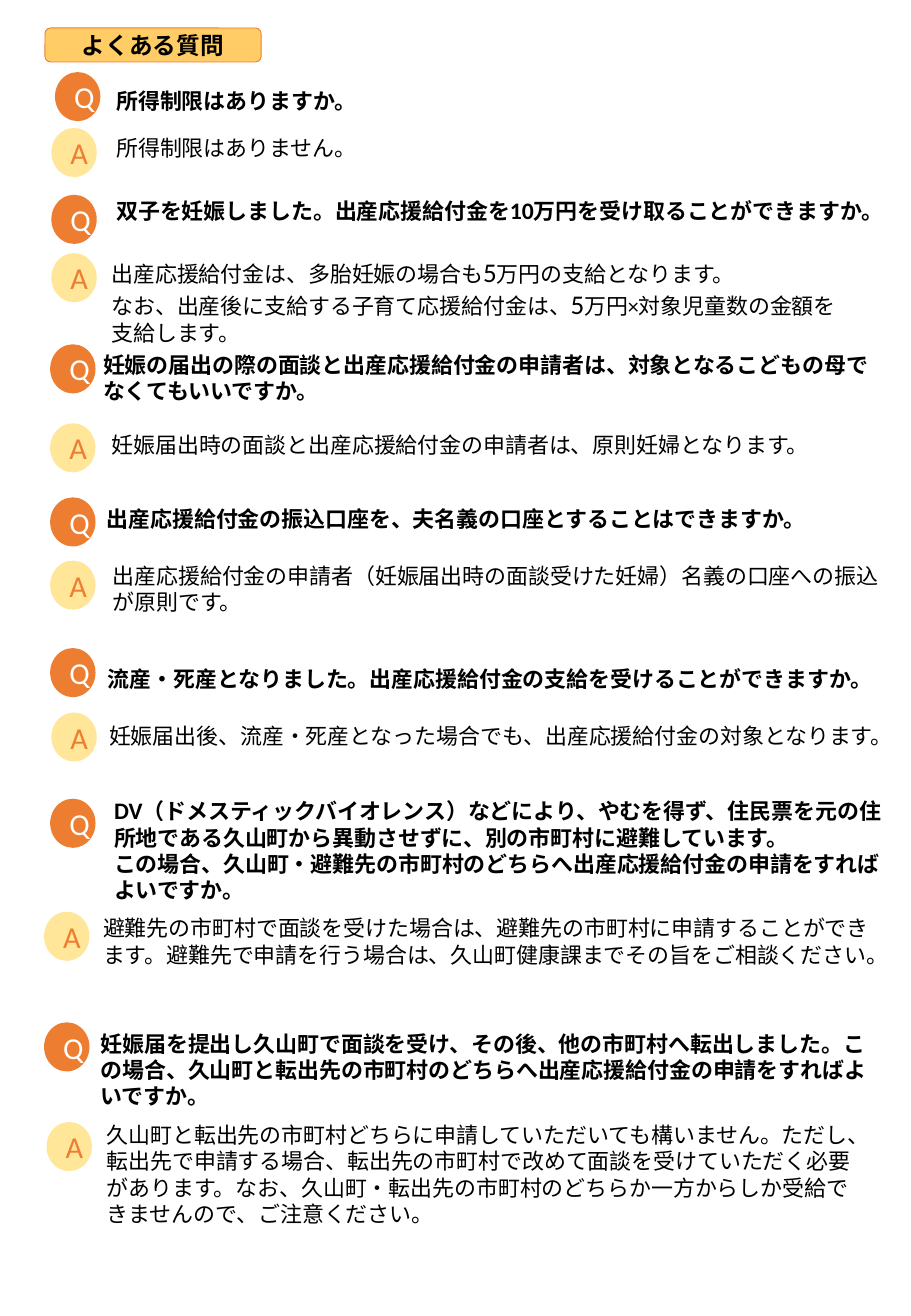
import pptx
import pptx.dml.color
import pptx.enum.shapes
import pptx.enum.text
import pptx.oxml.ns
import pptx.util
from lxml import etree

# The page grid has square cells of a hundredth of an inch.
COLUMNS, ROWS = 750, 1083
CELL = pptx.util.Inches(0.01)

FONT = "Calibri"
BLACK, WHITE = "000000", "FFFFFF"
ORANGE, CREAM, GOLD = "ED7D31", "FFE699", "FFCC66"
BODY_SIZE, BADGE_SIZE, HEADING_SIZE = 13, 18, 14
HEADING_AREA = (37, 23, 178, 28)
BADGE_COLUMNS, BADGE_ROWS = 36, 39
# Fill and letter colour of each badge.
BADGE_COLORS = {"Q": (ORANGE, WHITE), "A": (CREAM, ORANGE)}

# Letter, badge (column, row), text (column, row, columns, rows), paragraphs.
# A run is a string at body size, or a (string, size) pair.
ENTRIES = [
    ("Q", (46, 60), (86, 67, 378, 32), [["所得制限はありますか。"]]),
    ("A", (43, 106), (86, 106, 378, 32), [["所得制限はありません。"]]),
    ("Q", (43, 161), (86, 156, 664, 34), [
        ["双子を妊娠しました。出産応援給付金を", ("10", 14),
         "万円を受け取ることができますか。"]]),
    ("A", (43, 209), (82, 205, 646, 86), [
        ["出産応援給付金は、多胎妊娠の場合も", ("5", 16),
         "万円の支給となります。"],
        ["なお、出産後に支給する子育て応援給付金は、", ("5", 16),
         "万円×対象児童数の金額を"],
        ["支給します。"]]),
    ("Q", (42, 284), (75, 284, 661, 54), [
        ["妊娠の届出の際の面談と出産応援給付金の申請者は、"
         "対象となるこどもの母でなくてもいいですか。"]]),
    ("A", (42, 349), (82, 350, 638, 32), [
        ["妊娠届出時の面談と出産応援給付金の申請者は、原則妊婦となります。"]]),
    ("Q", (42, 410), (78, 411, 638, 32), [
        ["出産応援給付金の振込口座を、夫名義の口座とすることはできますか。"]]),
    ("A", (42, 462), (83, 458, 653, 54), [
        ["出産応援給付金の申請者（妊娠届出時の面談受けた妊婦）"
         "名義の口座への振込が原則です。"]]),
    ("Q", (42, 534), (79, 543, 638, 32), [
        ["流産・死産となりました。"
         "出産応援給付金の支給を受けることができますか。"]]),
    ("A", (43, 587), (80, 590, 653, 32), [
        ["妊娠届出後、流産・死産となった場合でも、"
         "出産応援給付金の対象となります。"]]),
    ("Q", (42, 658), (84, 650, 652, 99), [
        [("DV", 14),
         "（ドメスティックバイオレンス）などにより、やむを得ず、"
         "住民票を元の住所地である久山町から異動させずに、"
         "別の市町村に避難しています。"],
        ["この場合、久山町・避難先の市町村のどちらへ"
         "出産応援給付金の申請をすればよいですか。"]]),
    ("A", (37, 751), (75, 748, 661, 54), [
        ["避難先の市町村で面談を受けた場合は、"
         "避難先の市町村に申請することができます。"
         "避難先で申請を行う場合は、"
         "久山町健康課までその旨をご相談ください。"]]),
    ("Q", (37, 842), (73, 843, 654, 76), [
        ["妊娠届を提出し久山町で面談を受け、その後、"
         "他の市町村へ転出しました。"
         "この場合、久山町と転出先の市町村のどちらへ"
         "出産応援給付金の申請をすればよいですか。"]]),
    ("A", (39, 924), (78, 918, 638, 98), [
        ["久山町と転出先の市町村どちらに申請していただいても構いません。"
         "ただし、転出先で申請する場合、"
         "転出先の市町村で改めて面談を受けていただく必要があります。"
         "なお、久山町・転出先の市町村のどちらか一方からしか"
         "受給できませんので、ご注意ください。"]]),
]


def cells(*counts):
    return [count * CELL for count in counts]


def rgb(hex_code):
    return pptx.dml.color.RGBColor.from_string(hex_code)


def add_panel(slide, kind, area, fill, line, line_width):
    panel = slide.shapes.add_shape(kind, *cells(*area))
    panel.shadow.inherit = False
    panel.fill.solid()
    panel.fill.fore_color.rgb = rgb(fill)
    panel.line.color.rgb = rgb(line)
    panel.line.width = pptx.util.Pt(line_width)
    return panel


def add_run(paragraph, text, size, color=BLACK, bold=False):
    """Add a run whose Latin and East Asian fonts are the same."""
    run = paragraph.add_run()
    run.text = text
    run.font.name = FONT
    run.font.size = pptx.util.Pt(size)
    run.font.bold = bold
    run.font.color.rgb = rgb(color)
    etree.SubElement(run._r.get_or_add_rPr(), pptx.oxml.ns.qn("a:ea"),
                     typeface=FONT)


def center(frame):
    """Centre the frame both ways and return its first paragraph."""
    frame.vertical_anchor = pptx.enum.text.MSO_ANCHOR.MIDDLE
    frame.paragraphs[0].alignment = pptx.enum.text.PP_ALIGN.CENTER
    return frame.paragraphs[0]


def set_heading(slide, text):
    """Lay the title over a rounded plate."""
    plate = add_panel(slide, pptx.enum.shapes.MSO_SHAPE.ROUNDED_RECTANGLE,
                      HEADING_AREA, GOLD, ORANGE, 0.5)
    heading = slide.shapes.title
    plate.element.addnext(heading.element)
    heading.left, heading.top, heading.width, heading.height = cells(
        *HEADING_AREA)
    frame = heading.text_frame
    frame.auto_size = pptx.enum.text.MSO_AUTO_SIZE.NONE
    add_run(center(frame), text, HEADING_SIZE, bold=True)


def add_badge(slide, letter, place):
    fill, letter_color = BADGE_COLORS[letter]
    badge = add_panel(slide, pptx.enum.shapes.MSO_SHAPE.OVAL,
                      (*place, BADGE_COLUMNS, BADGE_ROWS), fill, fill, 1)
    add_run(center(badge.text_frame), letter, BADGE_SIZE, letter_color)


def add_passage(slide, area, paragraphs, bold):
    frame = slide.shapes.add_textbox(*cells(*area)).text_frame
    frame.word_wrap = True
    frame.auto_size = pptx.enum.text.MSO_AUTO_SIZE.SHAPE_TO_FIT_TEXT
    for index, runs in enumerate(paragraphs):
        paragraph = frame.add_paragraph() if index else frame.paragraphs[0]
        for run in runs:
            text, size = (run, BODY_SIZE) if isinstance(run, str) else run
            add_run(paragraph, text, size, bold=bold)


def main():
    deck = pptx.Presentation()
    deck.slide_width, deck.slide_height = cells(COLUMNS, ROWS)
    slide = deck.slides.add_slide(deck.slide_layouts.get_by_name("Title Only"))
    set_heading(slide, "よくある質問")
    for letter, badge_place, text_area, paragraphs in ENTRIES:
        add_badge(slide, letter, badge_place)
        add_passage(slide, text_area, paragraphs, bold=letter == "Q")
    deck.save("out.pptx")


if __name__ == "__main__":
    main()
